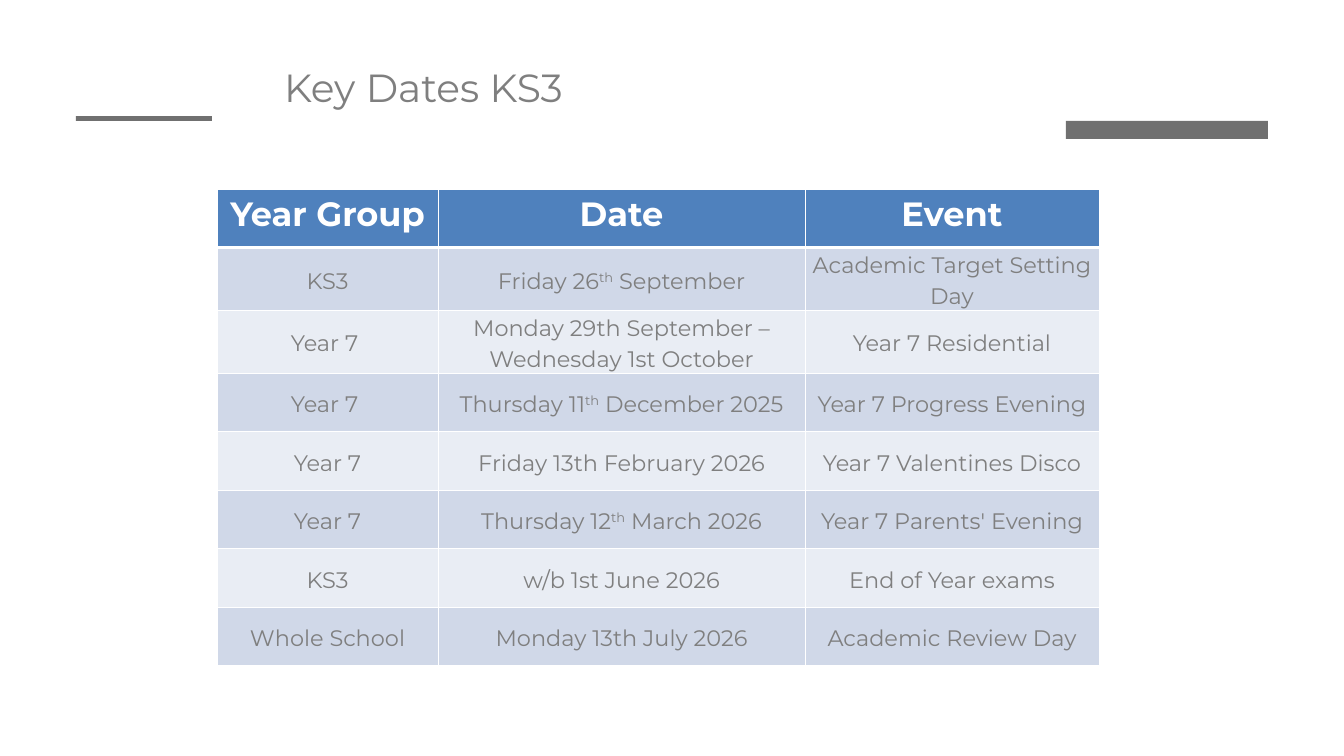
import pptx
import pptx.util
import pptx.dml.color
import pptx.enum.shapes
import pptx.enum.text
import pptx.oxml
import pptx.oxml.ns

SCALE = 914400 / 67.2
FONT = "Montserrat"
COLOURS = {
    "bar": "707070",
    "text": "7F7F7F",
    "header": "4F81BD",
    "band_dark": "D0D8E8",
    "band_light": "E9EDF4",
    "white": "FFFFFF",
}
HEADINGS = ("Year Group", "Date", "Event")
EVENTS = (
    ("KS3", "Friday 26^th^ September", "Academic Target Setting Day"),
    ("Year 7 ", "Monday 29th September – Wednesday 1st October", "Year 7 Residential"),
    ("Year 7 ", "Thursday 11^th^ December 2025", "Year 7 Progress Evening"),
    ("Year 7", "Friday 13th February 2026", "Year 7 Valentines Disco"),
    ("Year 7", "Thursday 12^th^ March 2026", "Year 7 Parents' Evening"),
    ("KS3", "w/b 1st June 2026", "End of Year exams"),
    ("Whole School", "Monday 13th July 2026", "Academic Review Day"),
)


def px(length):
    return pptx.util.Emu(round(length * SCALE))


def colour(name):
    return pptx.dml.color.RGBColor.from_string(COLOURS[name])


def write_text(frame, text, *, size, color="text", bold=False, align="CENTER", spacing=1.0):
    paragraph = frame.paragraphs[0]
    paragraph.alignment = getattr(pptx.enum.text.PP_ALIGN, align)
    paragraph.line_spacing = spacing
    for index, part in enumerate(text.split("^")):
        run = paragraph.add_run()
        run.text = part
        run.font.name = FONT
        run.font.size = pptx.util.Pt(size)
        run.font.bold = bold
        run.font.color.rgb = colour(color)
        if index % 2:
            run.font._element.set("baseline", "30000")


class SlideBuilder:
    def __init__(self, presentation):
        self.slide = presentation.slides.add_slide(presentation.slide_layouts[5])

    def title(self, text, left, top, width, height):
        shape = self.slide.shapes.title
        shape.left, shape.top, shape.width, shape.height = map(px, (left, top, width, height))
        frame = shape.text_frame
        frame.word_wrap = True
        frame.auto_size = pptx.enum.text.MSO_AUTO_SIZE.NONE
        frame.vertical_anchor = pptx.enum.text.MSO_ANCHOR.TOP
        frame.margin_left, frame.margin_top = px(17), px(2)
        write_text(frame, text, size=42, align="LEFT")

    def bar(self, left, top, width, height):
        shape = self.slide.shapes.add_shape(
            pptx.enum.shapes.MSO_SHAPE.RECTANGLE, *map(px, (left, top, width, height)))
        shape.shadow.inherit = False
        shape.fill.solid()
        shape.fill.fore_color.rgb = colour("bar")
        shape.line.fill.background()

    def borders(self, cell, top, bottom):
        properties = cell._tc.get_or_add_tcPr()
        for side, points in (("L", 1), ("R", 1), ("T", top), ("B", bottom)):
            properties.append(pptx.oxml.parse_xml(
                f'<a:ln{side} {pptx.oxml.ns.nsdecls("a")} w="{points * 12700}"><a:solidFill>'
                f'<a:srgbClr val="{COLOURS["white"]}"/></a:solidFill></a:ln{side}>'))

    def cell(self, cell, text, row):
        header = row == 0
        self.borders(cell, 3 if row == 1 else 1, 3 if header else 1)
        cell.fill.solid()
        band = "band_dark" if row % 2 else "band_light"
        cell.fill.fore_color.rgb = colour("header" if header else band)
        cell.margin_left = cell.margin_right = px(10 if header else 7)
        cell.margin_top = cell.margin_bottom = px(5 if header else 0)
        if header:
            cell.vertical_anchor = pptx.enum.text.MSO_ANCHOR.TOP
            write_text(cell.text_frame, text, size=36, color="white", bold=True)
        else:
            cell.vertical_anchor = pptx.enum.text.MSO_ANCHOR.MIDDLE
            write_text(cell.text_frame, text, size=24, spacing=1.15)

    def table(self, rows, left, top, widths, height):
        table = self.slide.shapes.add_table(
            len(rows), len(widths), px(left), px(top), px(sum(widths)), px(height)).table
        table.first_row = table.horz_banding = False
        for column, width in zip(table.columns, widths):
            column.width = px(width)
        for row, texts in enumerate(rows):
            for column, text in enumerate(texts):
                self.cell(table.cell(row, column), text, row)


def main():
    presentation = pptx.Presentation()
    presentation.slide_width, presentation.slide_height = px(1344), px(756)
    builder = SlideBuilder(presentation)
    builder.bar(76, 116, 136, 5)
    builder.bar(1066, 121, 202, 18)
    builder.title("Key Dates KS3", 267, 61, 722, 94)
    builder.table((HEADINGS, *EVENTS), 217, 189, (221, 367, 294), 468)
    presentation.save("out.pptx")


if __name__ == "__main__":
    main()
